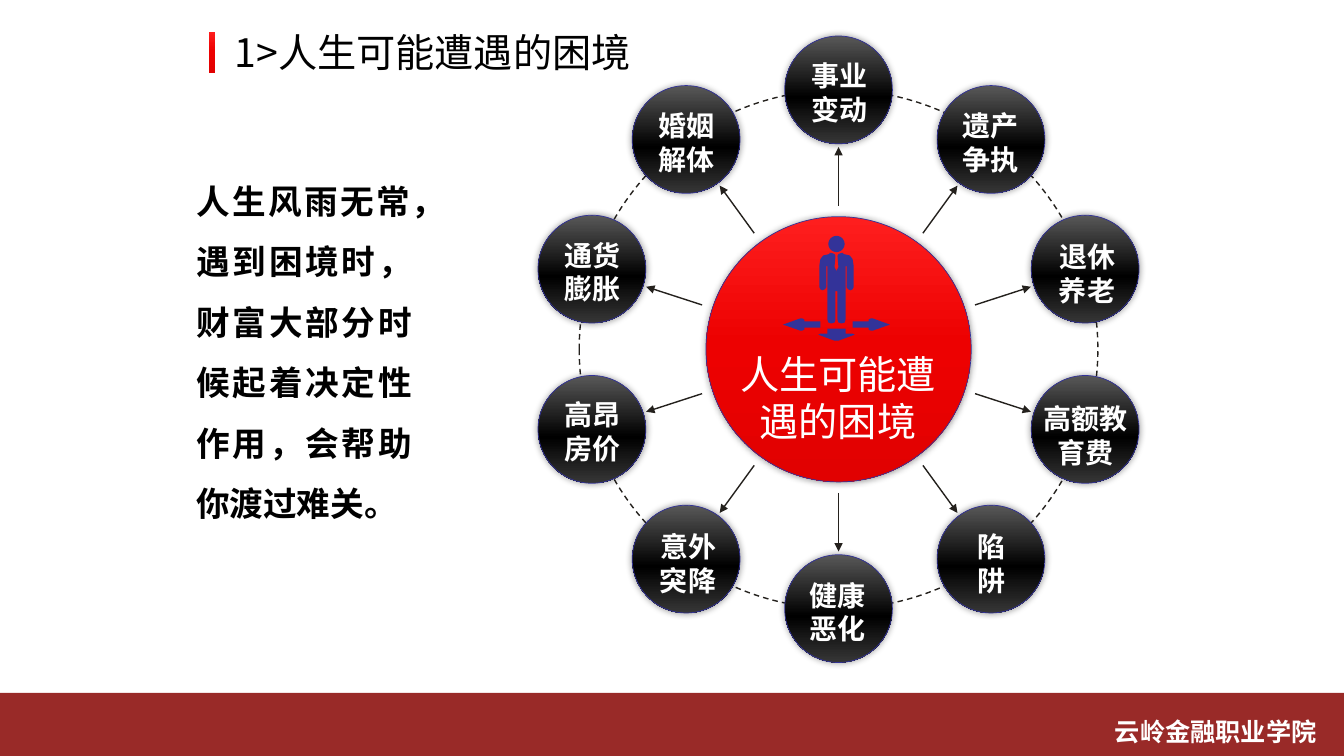
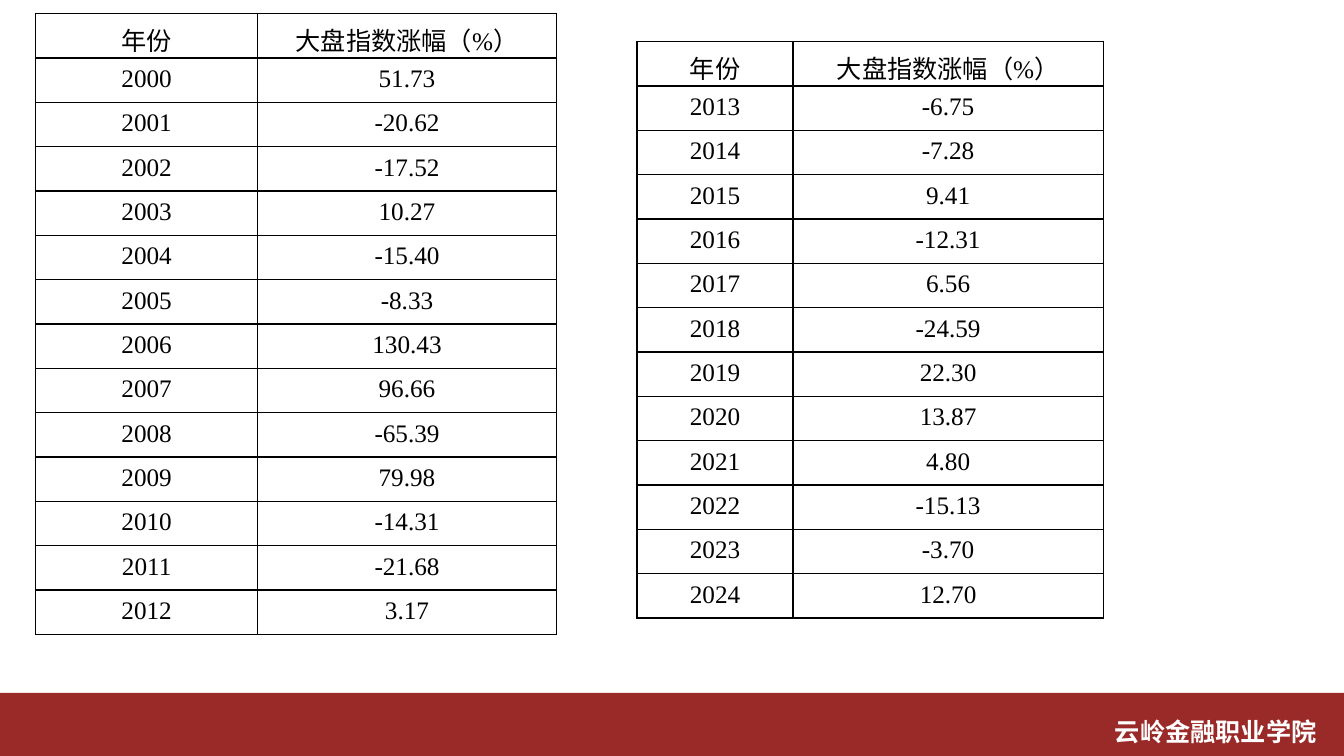
from math import cos, pi, sin

from lxml import etree
from pptx import Presentation
from pptx.dml.color import RGBColor
from pptx.enum.shapes import MSO_CONNECTOR, MSO_SHAPE
from pptx.enum.text import MSO_ANCHOR, MSO_AUTO_SIZE, PP_ALIGN
from pptx.oxml.ns import qn
from pptx.util import Pt

OVAL, RECT = MSO_SHAPE.OVAL, MSO_SHAPE.RECTANGLE
STRAIGHT = MSO_CONNECTOR.STRAIGHT
TOP, MIDDLE = MSO_ANCHOR.TOP, MSO_ANCHOR.MIDDLE
LEFT, CENTER, RIGHT, JUSTIFY = PP_ALIGN.LEFT, PP_ALIGN.CENTER, PP_ALIGN.RIGHT, PP_ALIGN.JUSTIFY

COLORS = {"band": "992A28", "white": "FFFFFF", "black": "000000", "blue": "333399", "ink": "24211D"}
RED_STOPS = [(0, "FE1E1E"), (48, "ED0101"), (100, "E10101")]
BLACK_STOPS = [(0, "585858"), (57, "000000"), (100, "363636")]
SANS, SERIF = "Noto Sans CJK SC", "Times New Roman"


def write(frame, text, size, color="white", bold=False, align=CENTER, anchor=TOP, pitch=1.2, font=SANS):
    """Fill a text frame; pitch is the line height in font sizes, None for the natural height."""
    frame.text = text
    for name, value in {"word_wrap": True, "auto_size": MSO_AUTO_SIZE.NONE, "vertical_anchor": anchor}.items():
        setattr(frame, name, value)
    for paragraph in frame.paragraphs:
        paragraph.alignment = align
        if pitch:
            paragraph.line_spacing = Pt(round(size * pitch, 1))
        paragraph._p.get_or_add_pPr().set("hangingPunct", "1")
        for run in paragraph.runs:
            run.font.color.rgb = RGBColor.from_string(COLORS[color])
            for name, value in {"size": Pt(size), "bold": bold, "name": font}.items():
                setattr(run.font, name, value)
            etree.SubElement(run._r.get_or_add_rPr(), qn("a:ea"), typeface=SANS)


def add_gradient(slide, kind, box, stops, glow=True):
    """Add a shape shaded from top to bottom, optionally with a blue rim and soft shadow."""
    shape = slide.shapes.add_shape(kind, *[Pt(round(v, 2)) for v in box])
    shape.shadow.inherit = False
    shape.fill.gradient()
    shape.fill.gradient_angle = 270
    properties = shape.element.spPr
    stop_list = properties.find(".//" + qn("a:gsLst"))
    for old_stop in list(stop_list):
        stop_list.remove(old_stop)
    for position, color in stops:
        stop = etree.SubElement(stop_list, qn("a:gs"), pos=str(position * 1000))
        etree.SubElement(stop, qn("a:srgbClr"), val=color)
    if not glow:
        shape.line.fill.background()
        return
    shape.line.color.rgb = RGBColor.from_string(COLORS["blue"])
    shape.line.width = Pt(0.5)
    shadow = etree.SubElement(properties.find(qn("a:effectLst")), qn("a:outerShdw"),
                              blurRad=str(Pt(5)), dist="0", dir="0", algn="ctr", rotWithShape="0")
    shade = etree.SubElement(shadow, qn("a:srgbClr"), val=COLORS["black"])
    etree.SubElement(shade, qn("a:alpha"), val="40000")


prs = Presentation()
prs.slide_width, prs.slide_height = Pt(960), Pt(540)
dilemmas = prs.slides.add_slide(prs.slide_layouts[5])
returns = prs.slides.add_slide(prs.slide_layouts[6])

# Footer band and school name, moved to the master for every slide
band = dilemmas.shapes.add_shape(RECT, Pt(0), Pt(495), Pt(960), Pt(45))
band.shadow.inherit = False
band.fill.solid()
band.fill.fore_color.rgb = RGBColor.from_string(COLORS["band"])
band.line.fill.background()
school = dilemmas.shapes.add_textbox(Pt(607), Pt(508), Pt(340.5), Pt(31))
write(school.text_frame, "云岭金融职业学院", 18, bold=True, align=RIGHT)
master_tree = prs.slide_master.element.cSld.spTree
for part in (band, school):
    master_tree.append(part.element)

# Slide 1: title with its red bar
title = dilemmas.shapes.title
for name, value in {"left": 160.5, "top": 16.5, "width": 396, "height": 41}.items():
    setattr(title, name, Pt(value))
write(title.text_frame, "1>人生可能遭遇的困境", 28, "black", align=LEFT, anchor=MIDDLE, pitch=None)
add_gradient(dilemmas, RECT, (149, 22.5, 5, 29.5), RED_STOPS, glow=False)

# Red hub and statement on the left
HUB_X, HUB_Y = 599, 249.5
HUB_SIZE, RING_SIZE, NODE_SIZE = 189.5, 370.5, 77
add_gradient(dilemmas, OVAL, (HUB_X - HUB_SIZE / 2, HUB_Y - HUB_SIZE / 2, HUB_SIZE, HUB_SIZE), RED_STOPS)
statement = dilemmas.shapes.add_textbox(Pt(133), Pt(111), Pt(168.5), Pt(314))
write(statement.text_frame, "人生风雨无常，遇到困境时，财富大部分时候起着决定性作用，会帮助你渡过难关。",
      24, "black", bold=True, align=JUSTIFY, pitch=1.8)

# Person at a crossroads: right halves, mirrored about the axis, in points
head = [(5.8 * sin(pi * i / 12), 5.8 - 5.8 * cos(pi * i / 12)) for i in range(13)]
body = [(0, 25.2), (1.4, 22.3), (0.7, 14.4), (1.4, 13), (3.6, 12.2), (5, 12.2), (5, 13), (9.4, 14),
        (11.5, 16.6), (12.2, 20.9), (12.2, 36.7), (11.5, 38.2), (10.1, 38.9), (8.3, 38.2), (7.2, 36.7),
        (7.2, 21.6), (6.5, 21.6), (6.5, 59.8), (5.8, 61.9), (3.6, 62.6), (1.4, 61.9), (0.7, 59.8),
        (0.7, 39.6), (0, 39.6)]
down_arrow = [(0, 66.2), (6.5, 66.2), (6.5, 69.8), (11.5, 69.8), (13, 70.6), (1.4, 74.9), (0, 74.9)]
side_arrow = [(11.5, 61.2), (23, 61.2), (23, 59.8), (24.5, 59), (25.9, 59), (38.2, 63.4),
              (25.9, 67.7), (24.5, 67.7), (23, 67), (23, 65.5), (11.5, 65.5)]
outlines = [half + [(-x, y) for x, y in reversed(half)] for half in (head, body, down_arrow)]
outlines += [side_arrow, [(-x, y) for x, y in side_arrow]]
tenths = [[(x * 10, y * 10) for x, y in outline] for outline in outlines]
builder = dilemmas.shapes.build_freeform(*tenths[0][0], scale=Pt(0.1))
builder.add_line_segments(tenths[0][1:])
for outline in tenths[1:]:
    builder.move_to(*outline[0])
    builder.add_line_segments(outline[1:])
person = builder.convert_to_shape(Pt(597.5), Pt(168.5))
person.shadow.inherit = False
person.fill.solid()
person.fill.fore_color.rgb = RGBColor.from_string(COLORS["blue"])
person.line.fill.background()

# Dashed ring
ring = dilemmas.shapes.add_shape(OVAL, Pt(HUB_X - RING_SIZE / 2), Pt(HUB_Y - RING_SIZE / 2),
                                 Pt(RING_SIZE), Pt(RING_SIZE))
ring.shadow.inherit = False
ring.fill.background()
ring.line.color.rgb = RGBColor.from_string(COLORS["ink"])
ring.line.width = Pt(1)
etree.SubElement(ring.line._get_or_add_ln(), qn("a:prstDash"), val="dash")

# Ten black nodes, clockwise from the top, each with an arrow from the hub
directions = [(sin(pi * i / 5), -cos(pi * i / 5)) for i in range(10)]
for dx, dy in directions:
    x, y = HUB_X + dx * RING_SIZE / 2, HUB_Y + dy * RING_SIZE / 2
    add_gradient(dilemmas, OVAL, (x - NODE_SIZE / 2, y - NODE_SIZE / 2, NODE_SIZE, NODE_SIZE), BLACK_STOPS)
for dx, dy in directions:
    ends = [Pt(round(v, 2)) for r in (102.5, 144.5) for v in (HUB_X + dx * r, HUB_Y + dy * r)]
    arrow = dilemmas.shapes.add_connector(STRAIGHT, *ends)
    arrow.line.color.rgb = RGBColor.from_string(COLORS["ink"])
    arrow.line.width = Pt(1)
    etree.SubElement(arrow.line._get_or_add_ln(), qn("a:tailEnd"), type="triangle")
    etree.SubElement(arrow.element.spPr, qn("a:effectLst"))

# Hub and node labels: text, left, top, width
hub_label = dilemmas.shapes.add_textbox(Pt(514), Pt(246.5), Pt(169), Pt(75))
write(hub_label.text_frame, "人生可能遭遇的困境", 28)
NODE_LABELS = [
    ("事业变动", 569.5, 37.5, 61), ("遗产争执", 677, 73, 61), ("退休养老", 746, 166.5, 61),
    ("高额教育费", 737.5, 282.5, 75.5), ("陷\n阱", 678, 374, 61), ("健康恶化", 568, 408.5, 61),
    ("意外突降", 461, 374, 61), ("高昂房价", 392.5, 279.5, 61), ("通货膨胀", 392.5, 165.5, 61),
    ("婚姻解体", 460, 73, 61),
]
for text, left, top, width in NODE_LABELS:
    label = dilemmas.shapes.add_textbox(Pt(left), Pt(top + 1), Pt(width), Pt(55.5))
    write(label.text_frame, text, 20, bold=True)

# Slide 2: yearly index change in two tables
HEADER = ("年份", "大盘指数涨幅（%）")
HEADER_HEIGHT, ROW_HEIGHT = 32, 31.68
EARLY = ["51.73", "-20.62", "-17.52", "10.27", "-15.40", "-8.33", "130.43", "96.66", "-65.39",
         "79.98", "-14.31", "-21.68", "3.17"]
LATE = ["-6.75", "-7.28", "9.41", "-12.31", "6.56", "-24.59", "22.30", "13.87", "4.80",
        "-15.13", "-3.70", "12.70"]
for first_year, changes, left, top, widths in [(2000, EARLY, 25.5, 9.5, (158.5, 213.5)),
                                               (2013, LATE, 455, 29.5, (111.5, 221.5))]:
    rows = [HEADER] + [(str(first_year + i), change) for i, change in enumerate(changes)]
    table = returns.shapes.add_table(len(rows), 2, Pt(left), Pt(top), Pt(sum(widths)),
                                     Pt(HEADER_HEIGHT + ROW_HEIGHT * len(changes))).table
    table.first_row = table.horz_banding = False
    for column, width in zip(table.columns, widths):
        column.width = Pt(width)
    for r, row in enumerate(rows):
        table.rows[r].height = Pt(ROW_HEIGHT if r else HEADER_HEIGHT)
        for c, text in enumerate(row):
            cell = table.cell(r, c)
            write(cell.text_frame, text, 18, "black", pitch=None if r else 1.2, font=SERIF)
            margins = {"margin_left": 10, "margin_right": 10,
                       "margin_top": 5 if r else 10, "margin_bottom": 5 if r else 0}
            for name, value in margins.items():
                setattr(cell, name, Pt(value))
            cell.vertical_anchor = TOP
            properties = cell._tc.get_or_add_tcPr()
            for side in ("a:lnL", "a:lnR", "a:lnT", "a:lnB"):
                border = etree.SubElement(properties, qn(side), w=str(Pt(1)))
                paint = etree.SubElement(border, qn("a:solidFill"))
                etree.SubElement(paint, qn("a:srgbClr"), val=COLORS["black"])
            cell.fill.background()

prs.save("out.pptx")
